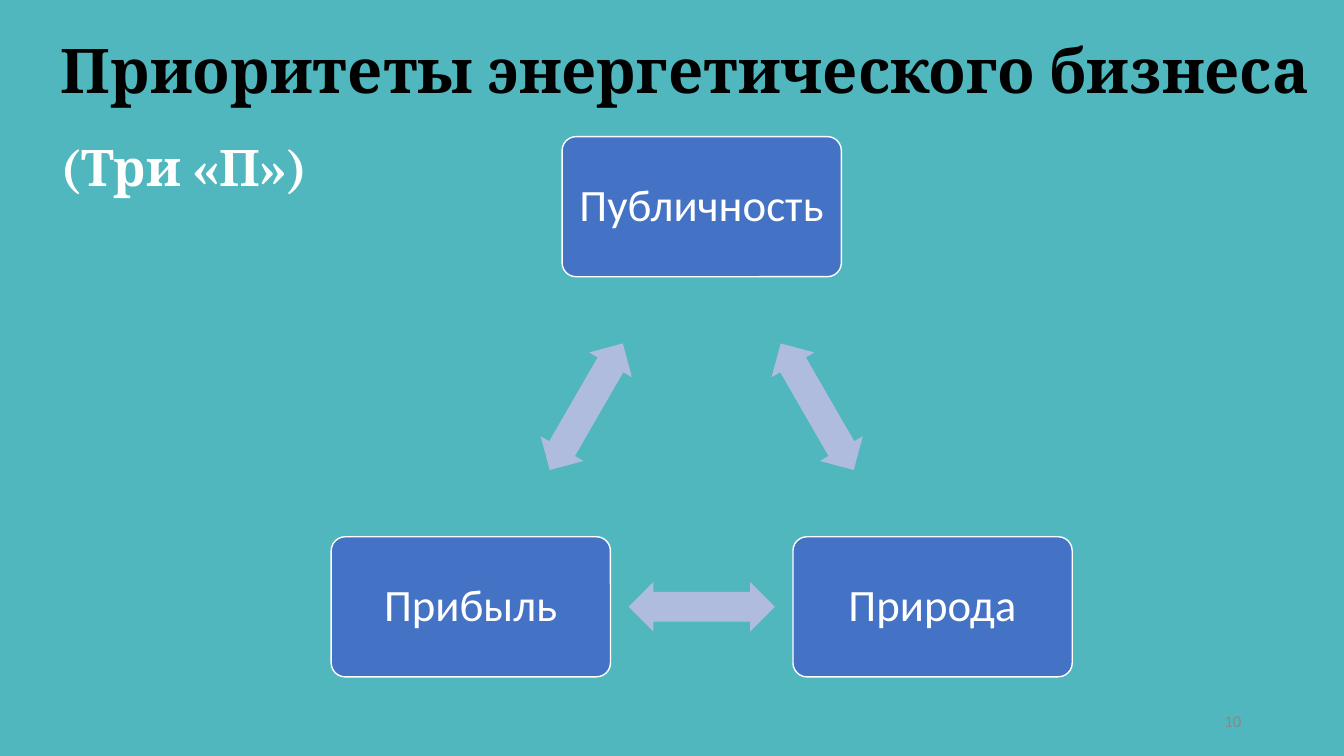
import pptx
import pptx.util
import pptx.dml.color
import pptx.enum.shapes
import pptx.enum.text
from pptx.util import Inches, Pt

SHAPE = pptx.enum.shapes.MSO_SHAPE
ALIGN = pptx.enum.text.PP_ALIGN
ANCHOR = pptx.enum.text.MSO_ANCHOR

# Card centres, clockwise from the top
PRIORITIES = [
    ("Публичность", 6.96, 2.05),
    ("Природа", 9.25, 6.02),
    ("Прибыль", 4.67, 6.02),
]
CARD_SIZE = (2.77, 1.39)
ARROW_SIZE = (1.45, 0.49)


def color(value):
    return pptx.dml.color.RGBColor.from_string(value)


def add_text(para, text, size, font, fill, bold=False):
    span = para.add_run()
    span.text = text
    span.font.size = Pt(size)
    span.font.name = font
    span.font.bold = bold
    span.font.color.rgb = color(fill)


def add_centred_shape(page, kind, x, y, size, fill):
    """Add a filled shape without outline, centred on (x, y)."""
    width, height = size
    shape = page.shapes.add_shape(kind, Inches(x - width / 2), Inches(y - height / 2),
                                  Inches(width), Inches(height))
    shape.shadow.inherit = False
    shape.fill.solid()
    shape.fill.fore_color.rgb = color(fill)
    shape.line.fill.background()
    return shape


def add_title(page):
    title = page.shapes.title
    title.left, title.top = Inches(0.5), Inches(-0.1)
    title.width, title.height = Inches(12.71), Inches(1.45)
    frame = title.text_frame
    frame.word_wrap = True
    frame.auto_size = pptx.enum.text.MSO_AUTO_SIZE.NONE
    frame.vertical_anchor = ANCHOR.TOP
    lines = [("Приоритеты энергетического бизнеса", 44, "000000"),
             ("(Три «П»)", 36, "FFFFFF")]
    for index, (text, size, fill) in enumerate(lines):
        para = frame.add_paragraph() if index else frame.paragraphs[0]
        para.alignment = ALIGN.LEFT
        para.line_spacing = 1.5
        para.space_before = Pt(0)
        add_text(para, text, size, "Cambria", fill, bold=True)


def add_card(page, text, x, y):
    card = add_centred_shape(page, SHAPE.ROUNDED_RECTANGLE, x, y, CARD_SIZE, "4472C4")
    card.adjustments[0] = 0.1
    card.line.color.rgb = color("FFFFFF")
    card.line.width = Pt(1)
    frame = card.text_frame
    frame.word_wrap = True
    frame.vertical_anchor = ANCHOR.MIDDLE
    frame.margin_left = frame.margin_right = Inches(0.05)
    para = frame.paragraphs[0]
    para.alignment = ALIGN.CENTER
    para.line_spacing = 0.9
    add_text(para, text, 32, "Calibri", "FFFFFF")


def add_arrow(page, x, y, rotation):
    arrow = add_centred_shape(page, SHAPE.LEFT_RIGHT_ARROW, x, y, ARROW_SIZE, "B0BCDE")
    arrow.adjustments[0] = 0.6
    arrow.adjustments[1] = 0.5
    arrow.rotation = rotation


def add_page_number(page, number):
    box = page.shapes.add_textbox(Inches(9.41), Inches(6.95), Inches(3), Inches(0.4))
    frame = box.text_frame
    frame.word_wrap = True
    frame.vertical_anchor = ANCHOR.MIDDLE
    para = frame.paragraphs[0]
    para.alignment = ALIGN.RIGHT
    add_text(para, number, 12, "Calibri", "898989")


def main():
    deck = pptx.Presentation()
    deck.slide_width, deck.slide_height = Inches(13.33), Inches(7.5)
    page = deck.slides.add_slide(deck.slide_layouts[5])
    page.background.fill.solid()
    page.background.fill.fore_color.rgb = color("4FB7BD")

    add_title(page)
    for index, (text, x, y) in enumerate(PRIORITIES):
        add_card(page, text, x, y)
        _, next_x, next_y = PRIORITIES[(index + 1) % len(PRIORITIES)]
        add_arrow(page, (x + next_x) / 2, (y + next_y) / 2, 60 + 120 * index)
    add_page_number(page, "10")
    deck.save("out.pptx")


if __name__ == "__main__":
    main()
